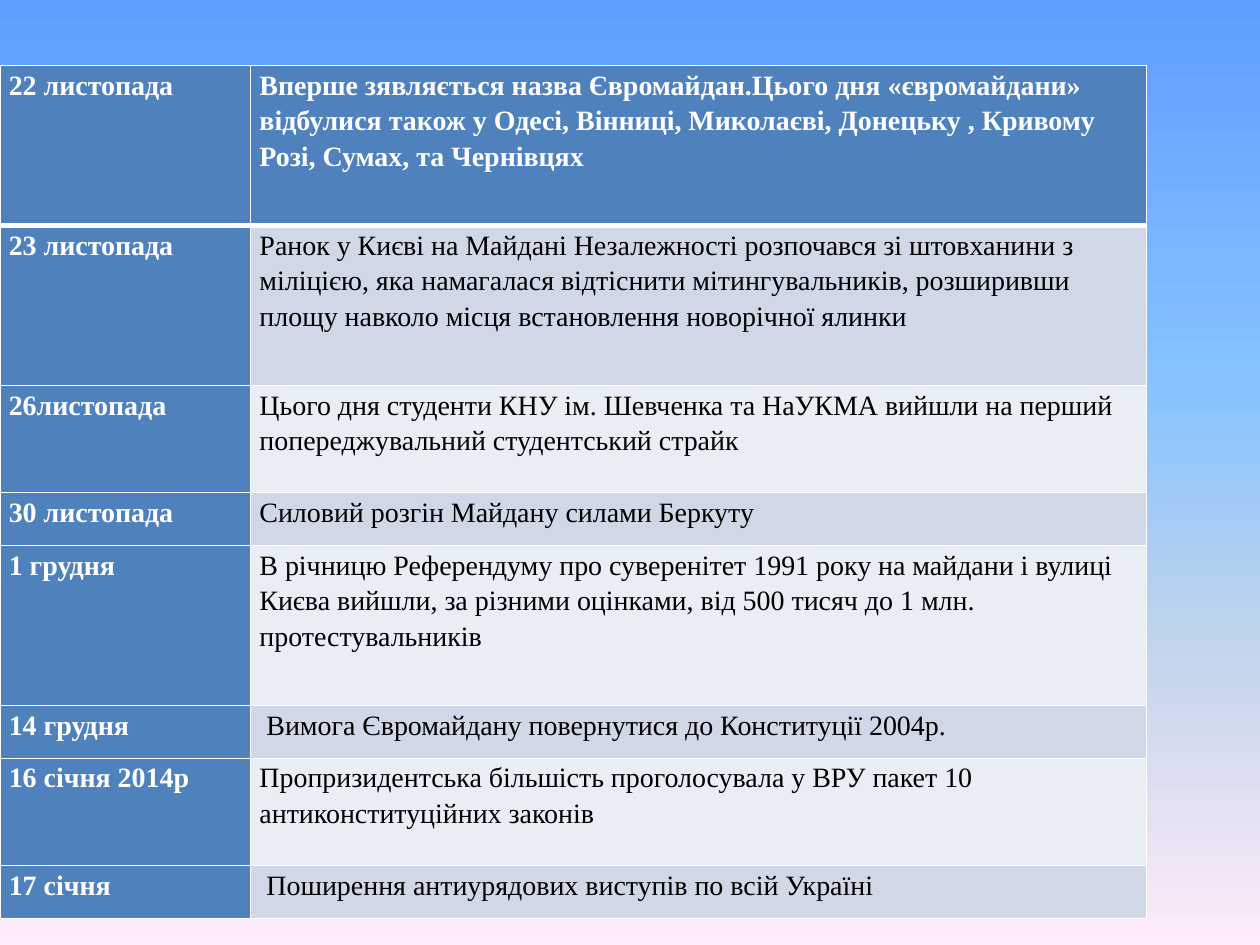
from lxml import etree
from pptx import Presentation
from pptx import util as u
from pptx.dml.color import RGBColor
from pptx.oxml import ns

BLUE, WHITE, BLACK = "4F81BD", "FFFFFF", "000000"
BANDS = ["E9EDF4", "D0D8E8"]
SKY = [(0, "5E9EFF"), (40, "85C2FF"), (70, "C4D6EB"), (100, "FFEBFA")]
COLS = [1.99, 7.11]
EVENTS = [
    (1.27, "22 листопада", "Вперше зявляється назва Євромайдан.Цього дня «євромайдани» "
     "відбулися також у Одесі, Вінниці, Миколаєві, Донецьку , Кривому Розі, Сумах, та Чернівцях"),
    (1.27, "23 листопада", "Ранок у Києві на Майдані Незалежності розпочався зі штовханини "
     "з міліцією, яка намагалася відтіснити мітингувальників, розширивши площу навколо "
     "місця встановлення новорічної ялинки"),
    (0.85, "26листопада", "Цього дня студенти КНУ ім. Шевченка та НаУКМА вийшли на перший "
     "попереджувальний студентський страйк"),
    (0.42, "30 листопада", "Силовий розгін Майдану силами Беркуту"),
    (1.27, "1 грудня", "В річницю Референдуму про суверенітет 1991 року на майдани і вулиці "
     "Києва вийшли, за різними оцінками, від 500 тисяч до 1 млн. протестувальників"),
    (0.42, "14 грудня", " Вимога Євромайдану повернутися до Конституції 2004р."),
    (0.85, "16 січня 2014р", "Пропризидентська більшість проголосувала у ВРУ пакет 10  "
     "антиконституційних законів"),
    (0.42, "17 січня", " Поширення антиурядових виступів по всій Україні"),
]


def rgb(code):
    return RGBColor.from_string(code)


def add(parent, tag, **attrs):
    return etree.SubElement(parent, ns.qn(tag), attrs)


def write(frame, words, size=16, color=BLACK, bold=False, font="Times New Roman"):
    para = frame.paragraphs[0]
    para.line_spacing = 1.15
    run = para.add_run()
    run.text = words
    run.font.size, run.font.name, run.font.bold = u.Pt(size), font, bold
    run.font.color.rgb = rgb(color)


def edge(cell, **widths):
    """Draw white borders, widths in points keyed by side L, R, T, B."""
    props = cell._tc.get_or_add_tcPr()
    for spot, (side, width) in enumerate(widths.items()):
        line = add(props, "a:ln" + side, w=str(u.Pt(width)))
        add(add(line, "a:solidFill"), "a:srgbClr", val=WHITE)
        props.insert(spot, line)


def paint(slide, stops):
    """Fill the background from top to bottom."""
    fill = slide.background.fill
    fill.gradient()
    fill.gradient_angle = 270
    ramp = next(slide.element.iter(ns.qn("a:gsLst")))
    for old in list(ramp):
        ramp.remove(old)
    for place, code in stops:
        add(add(ramp, "a:gs", pos=str(place * 1000)), "a:srgbClr", val=code)


def dates(slide, left, top, width, height):
    """Place the table of dates and events."""
    grid = slide.shapes.add_table(len(EVENTS), len(COLS), left, top, width, height).table
    grid.horz_banding = False
    for col, size in zip(grid.columns, COLS):
        col.width = u.Inches(size)
    for r, (tall, *words) in enumerate(EVENTS):
        grid.rows[r].height = u.Inches(tall)
        for c, part in enumerate(words):
            cell = grid.cell(r, c)
            head = r == 0 or c == 0
            cell.margin_left = cell.margin_right = u.Inches(0.07)
            cell.margin_top = cell.margin_bottom = 0
            cell.fill.solid()
            cell.fill.fore_color.rgb = rgb(BLUE if head else BANDS[r % 2])
            edge(cell, L=1, R=1, T=3 if r == 1 else 1, B=3 if r == 0 else 1)
            write(cell.text_frame, part, color=WHITE if head else BLACK, bold=head)


def main():
    deck = Presentation()
    deck.slide_width, deck.slide_height = u.Inches(10), u.Inches(7.5)
    slide = deck.slides.add_slide(deck.slide_layouts[6])
    paint(slide, SKY)
    dates(slide, 0, u.Inches(0.52), u.Inches(9.1), u.Inches(6.77))
    deck.save("out.pptx")


if __name__ == "__main__":
    main()
